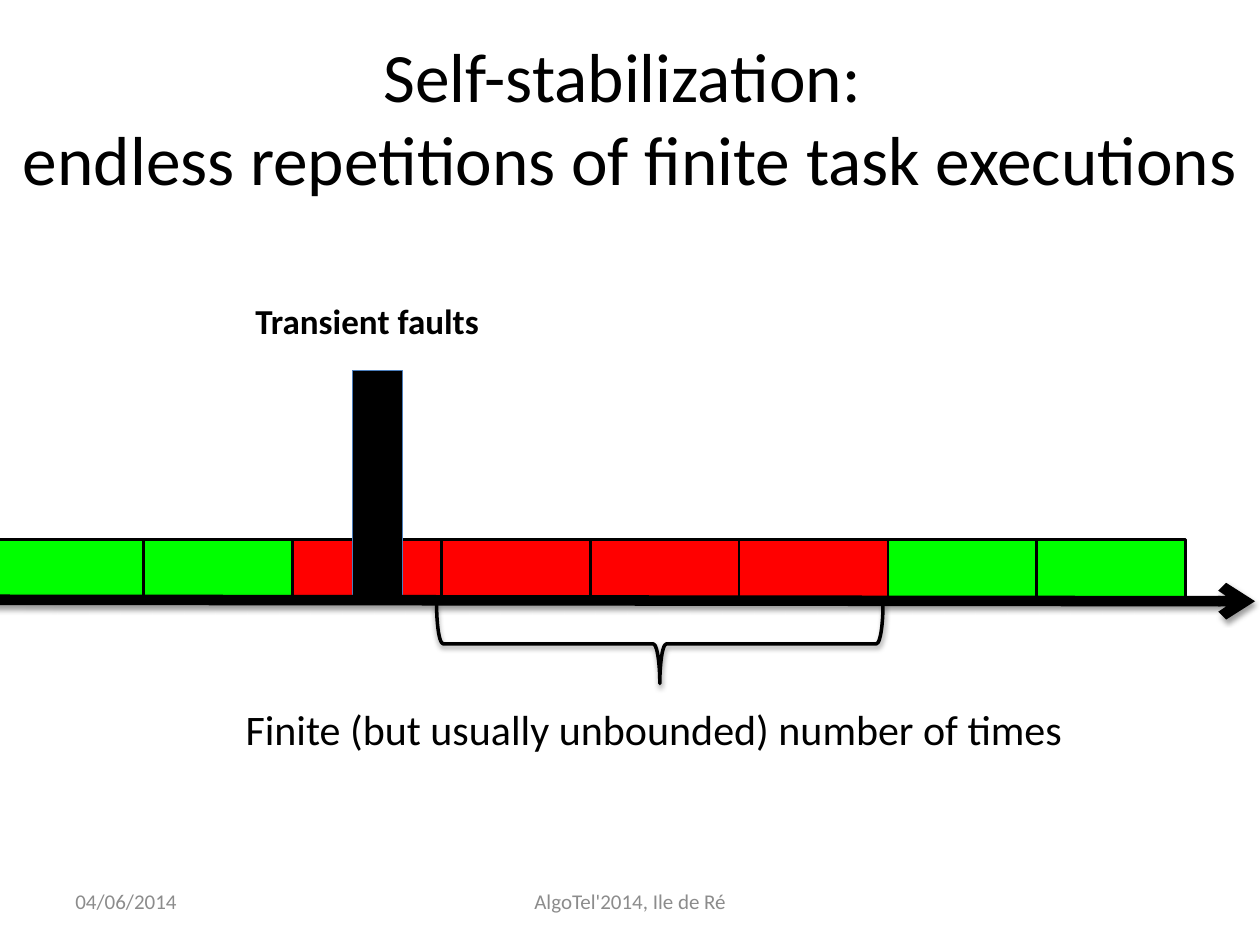
from lxml.etree import SubElement
from pptx import Presentation
from pptx.dml.color import RGBColor
from pptx.enum.shapes import MSO_CONNECTOR, MSO_SHAPE
from pptx.enum.text import MSO_ANCHOR, PP_ALIGN
from pptx.oxml.ns import qn
from pptx.util import Cm, Pt

COLOURS = {
    "black": "000000",
    "correct": "00FF00",
    "faulty": "FF0000",
    "edge": "4B7EBC",
    "footer": "8C8C8C",
}
CELL_LEFT, CELL_TOP, CELL_WIDTH, CELL_HEIGHT = -0.1, 10.88, 3, 1.2
TASKS = ["correct"] * 2 + ["faulty"] * 4 + ["correct"] * 2
FOOTER = {"size": 12, "colour": "footer", "anchor": MSO_ANCHOR.MIDDLE}


class TimelineSlide:
    """Draws text, shapes and arrows on one slide in a shared style."""

    def __init__(self, page, font="Calibri"):
        self.page = page
        self.font = font

    def colour(self, name):
        return RGBColor.from_string(COLOURS[name])

    def outline(self, item, colour, width):
        item.line.color.rgb = self.colour(colour)
        item.line.width = Pt(width)

    def shadow(self, item):
        properties = item._element.spPr
        for effects in properties.findall(qn("a:effectLst")):
            properties.remove(effects)
        effects = SubElement(properties, qn("a:effectLst"))
        outer = SubElement(effects, qn("a:outerShdw"), blurRad="39370", dist="20320",
                           dir="5400000", rotWithShape="0")
        black = SubElement(outer, qn("a:srgbClr"), val=COLOURS["black"])
        SubElement(black, qn("a:alpha"), val="38000")

    def text(self, words, area, size, colour="black", bold=False, wrap=True,
             align=PP_ALIGN.LEFT, anchor=MSO_ANCHOR.TOP):
        box = self.page.shapes.add_textbox(*map(Cm, area))
        frame = box.text_frame
        frame.word_wrap = wrap
        frame.vertical_anchor = anchor
        para = frame.paragraphs[0]
        para.text = words
        para.alignment = align
        formats = {"name": self.font, "size": Pt(size), "bold": bold}
        for span in para.runs:
            for key, value in formats.items():
                setattr(span.font, key, value)
            span.font.color.rgb = self.colour(colour)

    def block(self, area, fill, line="black", width=1.5):
        block = self.page.shapes.add_shape(MSO_SHAPE.RECTANGLE, *map(Cm, area))
        block.shadow.inherit = False
        block.fill.solid()
        block.fill.fore_color.rgb = self.colour(fill)
        self.outline(block, line, width)

    def brace(self, area):
        brace = self.page.shapes.add_shape(MSO_SHAPE.RIGHT_BRACE, *map(Cm, area))
        brace.rotation = 90
        brace.fill.background()
        self.outline(brace, "black", 2)
        self.shadow(brace)

    def arrow(self, ends, width):
        arrow = self.page.shapes.add_connector(MSO_CONNECTOR.STRAIGHT, *map(Cm, ends))
        self.outline(arrow, "black", width)
        SubElement(arrow.line._get_or_add_ln(), qn("a:tailEnd"), type="arrow")
        self.shadow(arrow)


def main():
    deck = Presentation()
    deck.slide_width, deck.slide_height = Cm(25.4), Cm(19.05)
    slide = TimelineSlide(deck.slides.add_slide(deck.slide_layouts[6]))

    slide.text("Self-stabilization: \nendless repetitions of finite task executions",
               (0, 0.76, 25.4, 3.18), 39.6, align=PP_ALIGN.CENTER, anchor=MSO_ANCHOR.MIDDLE)
    for index, state in enumerate(TASKS):
        slide.block((CELL_LEFT + index * CELL_WIDTH, CELL_TOP, CELL_WIDTH, CELL_HEIGHT), state)
    slide.block((7.11, 7.47, 1, 4.65), "black", "edge", 0.75)
    slide.arrow((CELL_LEFT, 12.09, 25.3, 12.12), 6)
    slide.brace((12.5, 8.48, 1.6, 9))
    slide.text("Finite (but usually unbounded) number of times",
               (4.7, 14.05, 17.15, 1.27), 24, wrap=False)
    slide.text("Transient faults", (4.9, 5.92, 5.59, 1.12), 20, bold=True)
    slide.text("04/06/2014", (1.27, 17.65, 5.92, 1.02), **FOOTER)
    slide.text("AlgoTel'2014, Ile de Ré", (8.68, 17.65, 8.05, 1.02),
               align=PP_ALIGN.CENTER, **FOOTER)
    deck.save("out.pptx")


if __name__ == "__main__":
    main()
